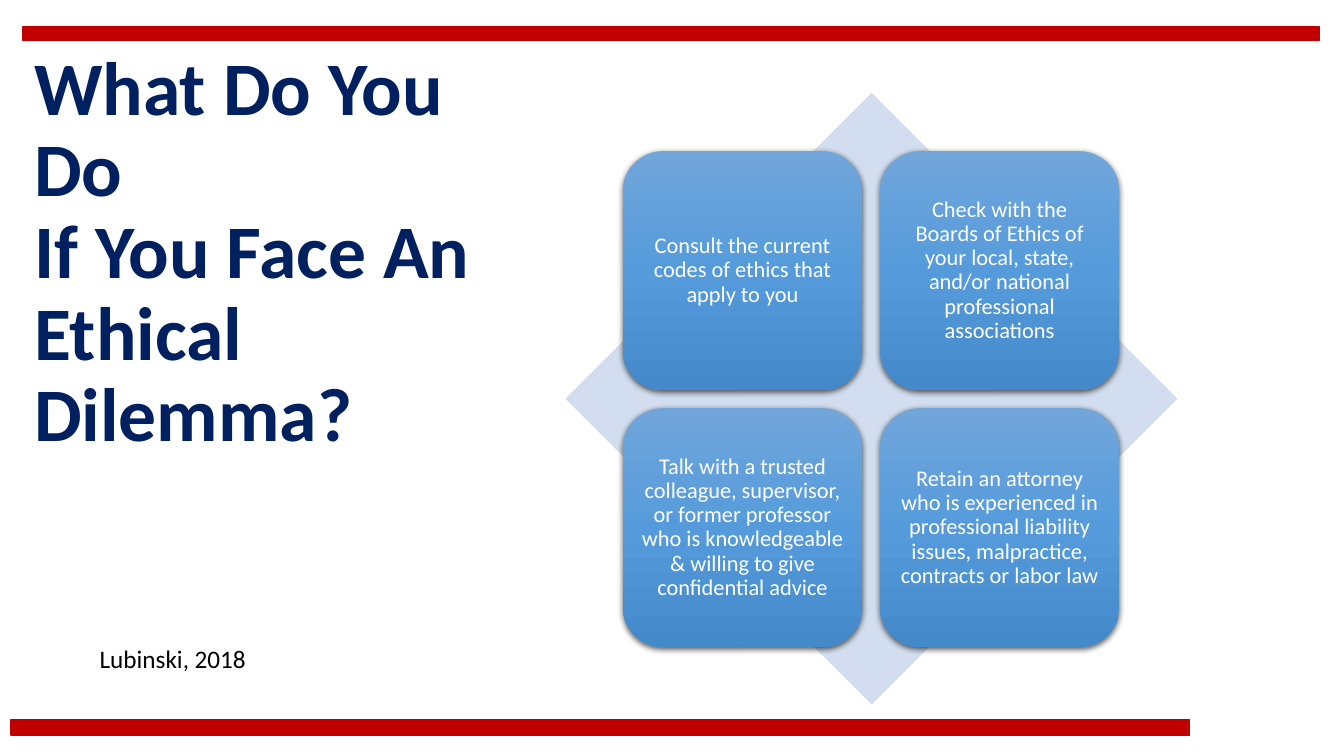
from dataclasses import dataclass

from lxml import etree
from pptx import Presentation
from pptx.dml.color import RGBColor
from pptx.enum.shapes import MSO_SHAPE
from pptx.enum.text import MSO_ANCHOR, PP_ALIGN
from pptx.oxml import parse_xml
from pptx.oxml.ns import nsdecls, qn
from pptx.util import Inches, Pt


@dataclass(frozen=True)
class Theme:
    font: str = "Calibri"
    bar: str = "C00000"
    title: str = "002060"
    diamond: str = "D2DEEF"
    step_text: str = "FFFFFF"
    citation: str = "000000"
    shadow: str = "000000"
    gradient: tuple = ((0, "71A6DB"), (50, "559BDB"), (100, "448ACA"))
    title_size: int = 54
    step_size: int = 16
    citation_size: int = 18


theme = Theme()


def add_plain_shape(kind, left, top, width, height, color):
    shape = slide.shapes.add_shape(
        kind, Inches(left), Inches(top), Inches(width), Inches(height))
    shape.shadow.inherit = False
    shape.fill.solid()
    shape.fill.fore_color.rgb = RGBColor.from_string(color)
    shape.line.fill.background()
    return shape


def write_text(shape, text, size, color, bold=False):
    frame = shape.text_frame
    frame.word_wrap = True
    frame.text = text
    paragraph = frame.paragraphs[0]
    for run in paragraph.runs:
        run.font.name = theme.font
        run.font.size = Pt(size)
        run.font.bold = bold
        run.font.color.rgb = RGBColor.from_string(color)
    return paragraph


prs = Presentation()
prs.slide_width = Inches(13.33)
prs.slide_height = Inches(7.5)
slide = prs.slides.add_slide(prs.slide_layouts[6])

for left, top, width, height in ((0.11, 7.14, 11.69, 0.15), (0.23, 0.27, 12.86, 0.13)):
    bar = add_plain_shape(MSO_SHAPE.RECTANGLE, left, top, width, height, theme.bar)
    bar.line.color.rgb = RGBColor.from_string(theme.bar)
    bar.line.width = Pt(1)

title = slide.shapes.add_textbox(Inches(0.24), Inches(1.96), Inches(5.14), Inches(1.12))
title.text_frame.vertical_anchor = MSO_ANCHOR.MIDDLE
title_line = write_text(title, "What Do You Do \vIf You Face An Ethical Dilemma?",
                        theme.title_size, theme.title, bold=True)
title_line.line_spacing = 0.9

add_plain_shape(MSO_SHAPE.DIAMOND, 5.61, 0.92, 6.07, 6.07, theme.diamond)

steps = (
    "Consult the current codes of ethics that apply to you",
    "Check with the Boards of Ethics of your local, state, and/or national "
    "professional associations",
    "Talk with a trusted colleague, supervisor, or former professor who is "
    "knowledgeable & willing to give confidential advice",
    "Retain an attorney who is experienced in professional liability issues, "
    "malpractice, contracts or labor law",
)
step_side, step_pitch = 2.37, 2.55
stops = "".join(
    f'<a:gs pos="{position * 1000}"><a:srgbClr val="{color}"/></a:gs>'
    for position, color in theme.gradient)
gradient_xml = (f'<a:gradFill {nsdecls("a")} rotWithShape="1"><a:gsLst>{stops}</a:gsLst>'
                '<a:lin ang="5400000" scaled="0"/></a:gradFill>')
shadow_xml = (f'<a:outerShdw {nsdecls("a")} blurRad="{Pt(4.5)}" dist="{Pt(1.5)}" '
              'dir="5400000" algn="ctr" rotWithShape="0">'
              f'<a:srgbClr val="{theme.shadow}"><a:alpha val="63000"/></a:srgbClr>'
              '</a:outerShdw>')

for index, step in enumerate(steps):
    row, column = divmod(index, 2)
    card = add_plain_shape(MSO_SHAPE.ROUNDED_RECTANGLE,
                           6.18 + column * step_pitch, 1.5 + row * step_pitch,
                           step_side, step_side, theme.gradient[1][1])
    properties = card.element.spPr
    properties.replace(properties.find(qn("a:solidFill")), parse_xml(gradient_xml))
    properties.find(qn("a:effectLst")).append(parse_xml(shadow_xml))
    frame = card.text_frame
    frame.margin_left = frame.margin_right = Inches(0.07)
    frame.margin_top = frame.margin_bottom = Inches(0.07)
    frame.vertical_anchor = MSO_ANCHOR.MIDDLE
    step_line = write_text(card, step, theme.step_size, theme.step_text)
    step_line.alignment = PP_ALIGN.CENTER
    step_line.line_spacing = 0.9

citation = slide.shapes.add_textbox(Inches(0.89), Inches(6.33), Inches(2.12), Inches(0.4))
write_text(citation, "Lubinski, 2018", theme.citation_size, theme.citation)

prs.save("out.pptx")
